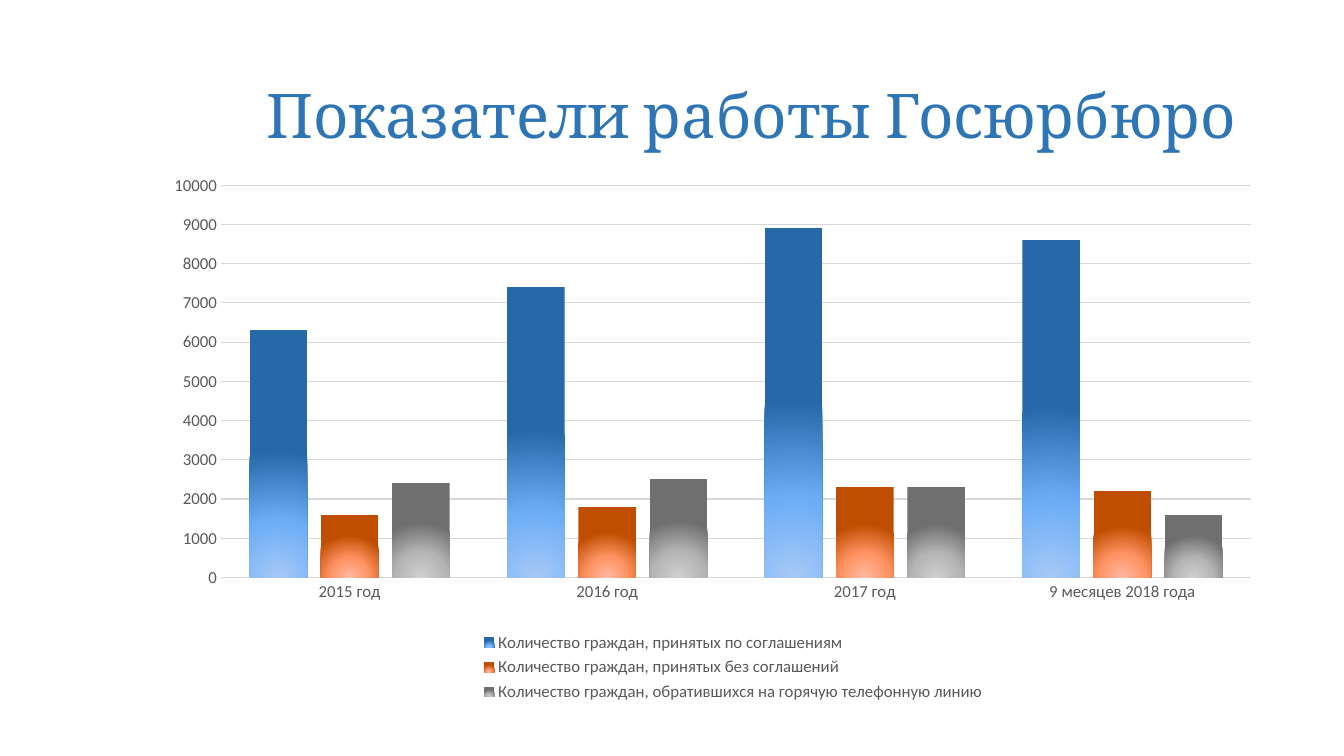
from lxml import etree
from pptx import Presentation
from pptx.chart.data import CategoryChartData
from pptx.dml.color import RGBColor
from pptx.enum.chart import XL_CHART_TYPE, XL_LEGEND_POSITION, XL_TICK_MARK
from pptx.enum.text import MSO_ANCHOR, MSO_AUTO_SIZE, PP_ALIGN
from pptx.oxml import parse_xml
from pptx.oxml.ns import nsdecls, qn
from pptx.util import Pt

COLUMNS = XL_CHART_TYPE.COLUMN_CLUSTERED
BOTTOM = XL_LEGEND_POSITION.BOTTOM
NO_TICK = XL_TICK_MARK.NONE
MIDDLE = MSO_ANCHOR.MIDDLE
NO_FIT = MSO_AUTO_SIZE.NONE
LEFT = PP_ALIGN.LEFT

TITLE_BLUE, LABEL_GREY, LINE_GREY = "2E75B6", "595959", "D9D9D9"
YEARS = ["2015 год", "2016 год", "2017 год", "9 месяцев 2018 года"]
# Name, values, gradient colours from centre to edge
SERIES = [
    ("Количество граждан, принятых по соглашениям",
     (6300, 7400, 8900, 8600), ("A6C9F6", "6AACF6", "2569A8")),
    ("Количество граждан, принятых без соглашений",
     (1600, 1800, 2300, 2200), ("FFBAA3", "FF9363", "C04E00")),
    ("Количество граждан, обратившихся на горячую телефонную линию",
     (2400, 2500, 2300, 1600), ("CFCFCF", "B5B5B5", "6F6F6F")),
]
STOPS = (0, 46, 100)


def color(hex_code):
    return RGBColor.from_string(hex_code)


def style_font(font, name, size, hex_code):
    font.name = name
    font.size = Pt(size)
    font.bold = False
    font.color.rgb = color(hex_code)


def add_title(page, text):
    title = page.shapes.title
    title.left, title.top, title.width, title.height = (
        Pt(182.9), Pt(28.8), Pt(711.4), Pt(104.4))
    frame = title.text_frame
    frame.word_wrap = True
    frame.auto_size = NO_FIT
    frame.vertical_anchor = MIDDLE
    para = frame.paragraphs[0]
    para.alignment = LEFT
    span = para.add_run()
    span.text = text
    style_font(span.font, "Cambria", 44, TITLE_BLUE)


def fill_radial(series, hex_codes):
    """Glow that rises from below the foot of each column."""
    series.format.fill.solid()
    solid = next(series._element.iter(qn("a:solidFill")))
    stops = "".join(
        f'<a:gs pos="{stop * 1000}"><a:srgbClr val="{code}"/></a:gs>'
        for stop, code in zip(STOPS, hex_codes))
    gradient = parse_xml(
        f'<a:gradFill {nsdecls("a")} rotWithShape="1"><a:gsLst>{stops}</a:gsLst>'
        '<a:path path="circle"><a:fillToRect l="50000" t="155000" r="50000" '
        'b="-55000"/></a:path></a:gradFill>')
    solid.getparent().replace(solid, gradient)


def place(part, left, top, width, height, inner=False):
    """Give a chart part a fixed place, in fractions of the chart."""
    for old in part.findall(qn("c:layout")):
        part.remove(old)
    layout = etree.Element(qn("c:layout"))
    manual = etree.SubElement(layout, qn("c:manualLayout"))
    settings = [("xMode", "edge"), ("yMode", "edge"), ("x", left),
                ("y", top), ("w", width), ("h", height)]
    if inner:
        settings.insert(0, ("layoutTarget", "inner"))
    for name, value in settings:
        etree.SubElement(manual, qn(f"c:{name}")).set("val", str(value))
    position = part.find(qn("c:legendPos"))
    if position is None:
        part.insert(0, layout)
    else:
        position.addnext(layout)


def style_axis(axis):
    axis.major_tick_mark = axis.minor_tick_mark = NO_TICK
    style_font(axis.tick_labels.font, "Calibri", 12, LABEL_GREY)


def style_line(line, width):
    line.color.rgb = color(LINE_GREY)
    line.width = Pt(width)


def add_column_chart(page):
    data = CategoryChartData(number_format="General")
    data.categories = YEARS
    for name, values, _ in SERIES:
        data.add_series(name, values)
    chart = page.shapes.add_chart(
        COLUMNS, Pt(123.1), Pt(112.3), Pt(771.1), Pt(400.3), data).chart
    style_font(chart.font, "Calibri", 10, "000000")
    chart.has_title = False

    # Columns
    plot = chart.plots[0]
    plot.gap_width, plot.overlap = 100, -24
    plot.vary_by_categories = False
    for series, (_, _, hex_codes) in zip(plot.series, SERIES):
        fill_radial(series, hex_codes)
        series.format.line.fill.background()

    # Axes
    years, counts = chart.category_axis, chart.value_axis
    style_axis(years)
    style_axis(counts)
    style_line(years.format.line, 1)
    counts.format.line.fill.background()
    counts.minimum_scale, counts.maximum_scale, counts.major_unit = 0, 10000, 1000
    counts.has_major_gridlines = True
    style_line(counts.major_gridlines.format.line, 0.75)

    # Legend and layout
    chart.has_legend = True
    legend = chart.legend
    legend.position = BOTTOM
    legend.include_in_layout = False
    style_font(legend.font, "Calibri", 12, LABEL_GREY)
    place(legend._element, 0.28, 0.84, 0.48, 0.14)
    plot_area = next(chart._chartSpace.iter(qn("c:plotArea")))
    place(plot_area, 0.045, 0.05, 0.955, 0.7, inner=True)


def main():
    deck = Presentation()
    deck.slide_width, deck.slide_height = Pt(960), Pt(540)
    page = deck.slides.add_slide(deck.slide_layouts[5])
    add_title(page, "Показатели работы Госюрбюро")
    add_column_chart(page)
    deck.save("out.pptx")


if __name__ == "__main__":
    main()
